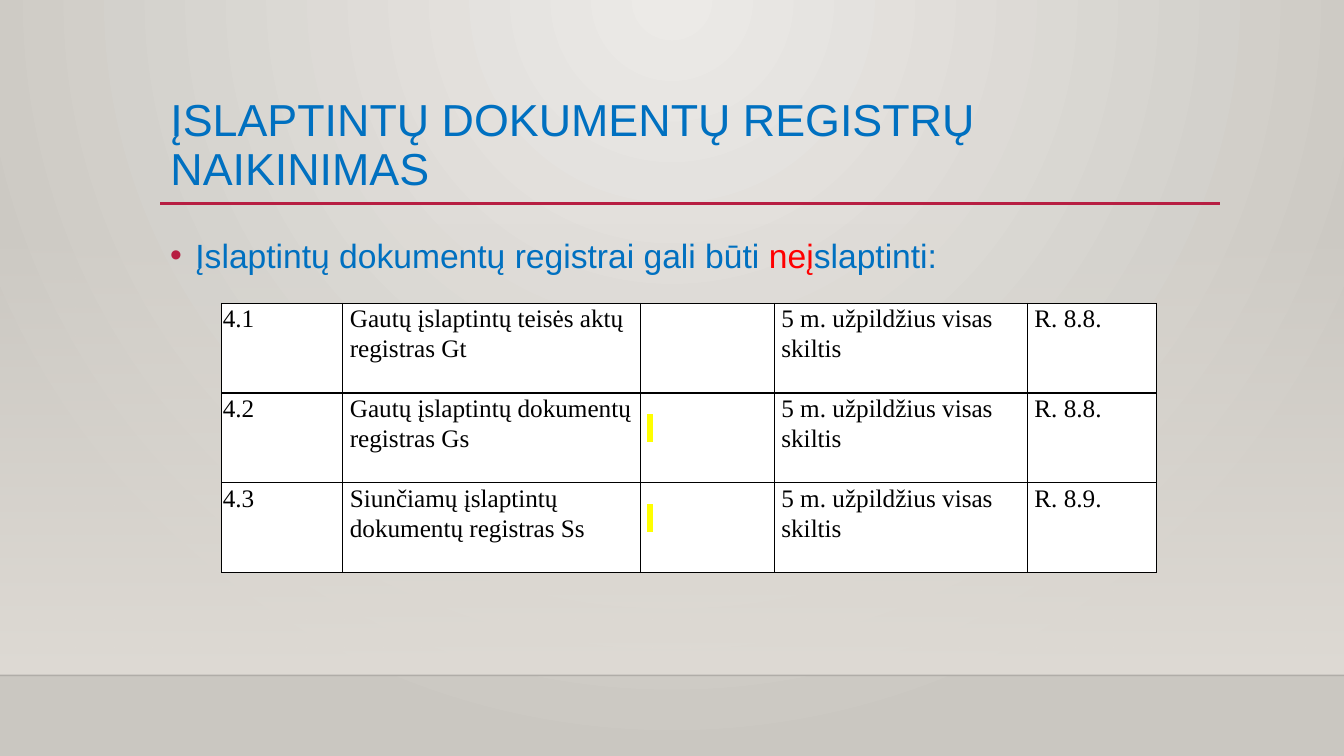
import pptx
import pptx.dml.color
import pptx.enum.shapes
import pptx.enum.text
import pptx.oxml
import pptx.oxml.ns
import pptx.util
from lxml import etree

Inches = pptx.util.Inches
Pt = pptx.util.Pt
RGBColor = pptx.dml.color.RGBColor
qn = pptx.oxml.ns.qn

BLUE = RGBColor(0x00, 0x70, 0xC0)
RED = RGBColor(0xFF, 0x00, 0x00)
CRIMSON = RGBColor(0xB7, 0x1E, 0x42)
BLACK = RGBColor(0x00, 0x00, 0x00)
WHITE = RGBColor(0xFF, 0xFF, 0xFF)
YELLOW = RGBColor(0xFF, 0xFF, 0x00)
PALE = RGBColor(0xEC, 0xEA, 0xE7)
STONE = RGBColor(0xCA, 0xC7, 0xC1)
SAND = RGBColor(0xDF, 0xDB, 0xD5)

TITLE = "ĮSLAPTINTŲ DOKUMENTŲ REGISTRŲ NAIKINIMAS"
STATEMENT = [
    ("Įslaptintų dokumentų registrai gali būti ", BLUE),
    ("neį", RED),
    ("slaptinti:", BLUE),
]
MARK = "\N{NO-BREAK SPACE}"
TERM = "5 m. užpildžius visas skiltis"
REGISTERS = [
    ("4.1", "Gautų įslaptintų teisės aktų registras Gt", "", TERM, "R. 8.8."),
    ("4.2", "Gautų įslaptintų dokumentų registras Gs", MARK, TERM, "R. 8.8."),
    ("4.3", "Siunčiamų įslaptintų dokumentų registras Ss", MARK, TERM, "R. 8.9."),
]
COLUMN_WIDTHS = [1.2, 2.95, 1.33, 2.51, 1.28]
ROW_HEIGHT = 0.89
LEFT, TEXT_WIDTH = 1.59, 10.5
SHELF_TOP = 6.7
TITLE_FORMAT = {"name": "Arial", "size": Pt(32)}
BODY_FORMAT = {"name": "Arial", "size": Pt(24)}
CELL_FORMAT = {"name": "Times New Roman", "size": Pt(18)}


def set_values(target, values):
    for name, value in values.items():
        setattr(target, name, value)


def add_element(parent, tag, **attributes):
    return etree.SubElement(parent, qn(tag), attributes)


def add_run(paragraph, text, color, values):
    run = paragraph.add_run()
    run.text = text
    set_values(run.font, values)
    run.font.color.rgb = color
    return run


def set_gradient(fill, colors):
    fill.gradient()
    for stop, color, position in zip(fill.gradient_stops, colors, (0, 1)):
        stop.color.rgb = color
        stop.position = position


def add_rule(slide, left, right, top, color, width):
    rule = slide.shapes.add_connector(
        pptx.enum.shapes.MSO_CONNECTOR.STRAIGHT,
        Inches(left), Inches(top), Inches(right), Inches(top))
    rule.line.color.rgb = color
    rule.line.width = Pt(width)
    add_element(rule._element.spPr, "a:effectLst")
    return rule


def add_backdrop(slide):
    set_gradient(slide.background.fill, (PALE, STONE))
    linear = next(slide._element.iter(qn("a:lin")))
    gradient = linear.getparent()
    gradient.remove(linear)
    circle = add_element(gradient, "a:path", path="circle")
    add_element(circle, "a:fillToRect", l="43000", t="0", r="43000", b="100000")

    wall = slide.shapes.add_shape(
        pptx.enum.shapes.MSO_SHAPE.RECTANGLE,
        0, Inches(2.21), Inches(13.33), Inches(SHELF_TOP - 2.21))
    wall.shadow.inherit = False
    wall.line.fill.background()
    set_gradient(wall.fill, (SAND, SAND))
    wall.fill.gradient_angle = 270
    add_element(next(wall._element.spPr.iter(qn("a:srgbClr"))), "a:alpha", val="0")

    shelf = add_rule(slide, 0, 13.33, SHELF_TOP, BLACK, 1)
    add_element(next(shelf._element.spPr.iter(qn("a:srgbClr"))), "a:alpha", val="20000")
    add_rule(slide, LEFT, 12.1, 2.02, CRIMSON, 2.5)


def add_title(slide):
    title = slide.shapes.title
    set_values(title, {"left": Inches(LEFT), "top": Inches(0.88),
                       "width": Inches(TEXT_WIDTH), "height": Inches(1.15)})
    set_values(title.text_frame, {
        "word_wrap": True, "vertical_anchor": pptx.enum.text.MSO_ANCHOR.MIDDLE})
    paragraph = title.text_frame.paragraphs[0]
    set_values(paragraph, {"line_spacing": 0.9, "alignment": pptx.enum.text.PP_ALIGN.LEFT})
    add_run(paragraph, TITLE, BLUE, TITLE_FORMAT)


def add_statement(slide):
    box = slide.shapes.add_textbox(
        Inches(LEFT), Inches(2.2), Inches(TEXT_WIDTH), Inches(0.75))
    box.text_frame.word_wrap = True
    paragraph = box.text_frame.paragraphs[0]
    properties = paragraph._p.get_or_add_pPr()
    properties.set("marL", str(Inches(0.25)))
    properties.set("indent", str(-Inches(0.25)))
    bullet_color = add_element(properties, "a:buClr")
    add_element(bullet_color, "a:srgbClr", val=str(CRIMSON))
    add_element(properties, "a:buFont", typeface="Arial")
    add_element(properties, "a:buChar", char="•")
    paragraph.line_spacing = 1.2
    for text, color in STATEMENT:
        add_run(paragraph, text, color, BODY_FORMAT)


def format_cell(cell, text, side_margin):
    properties = cell._tc.get_or_add_tcPr()
    for side in ("a:lnL", "a:lnR", "a:lnT", "a:lnB"):
        border = add_element(properties, side, w=str(Pt(1)))
        add_element(add_element(border, "a:solidFill"), "a:srgbClr", val=str(BLACK))
    cell.fill.solid()
    cell.fill.fore_color.rgb = WHITE
    set_values(cell, {
        "margin_left": Inches(side_margin), "margin_right": Inches(side_margin),
        "margin_top": Inches(0.19 if text == MARK else 0), "margin_bottom": 0})
    if not text:
        return
    paragraph = cell.text_frame.paragraphs[0]
    paragraph.line_spacing = 1.07
    run = add_run(paragraph, text, BLACK, CELL_FORMAT)
    if text == MARK:
        highlight = etree.Element(qn("a:highlight"))
        add_element(highlight, "a:srgbClr", val=str(YELLOW))
        run._r.rPr.find(qn("a:solidFill")).addnext(highlight)


def add_registers(slide):
    frame = slide.shapes.add_table(
        len(REGISTERS), len(COLUMN_WIDTHS), Inches(2.2), Inches(3.01),
        Inches(sum(COLUMN_WIDTHS)), Inches(ROW_HEIGHT * len(REGISTERS)))
    table = frame.table
    set_values(table, {"first_row": False, "horz_banding": False})
    for column, width in zip(table.columns, COLUMN_WIDTHS):
        column.width = Inches(width)
    for row, texts in zip(table.rows, REGISTERS):
        row.height = Inches(ROW_HEIGHT)
        for index, (cell, text) in enumerate(zip(row.cells, texts)):
            format_cell(cell, text, 0.07 if index else 0.01)


def main():
    presentation = pptx.Presentation()
    set_values(presentation, {"slide_width": Inches(13.33), "slide_height": Inches(7.5)})
    slide = presentation.slides.add_slide(presentation.slide_layouts[5])
    add_backdrop(slide)
    add_title(slide)
    add_statement(slide)
    add_registers(slide)
    presentation.save("out.pptx")


if __name__ == "__main__":
    main()
